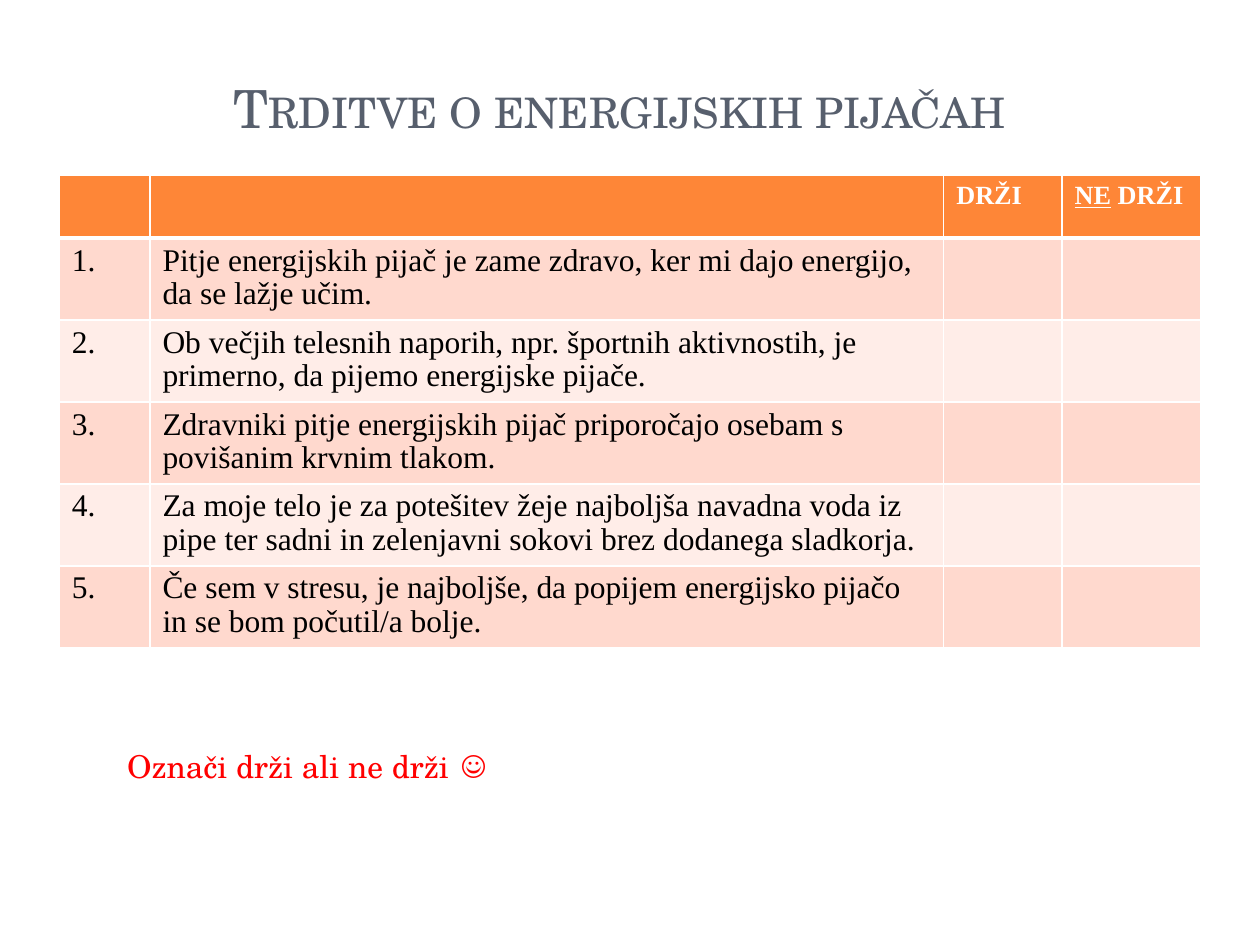
from pptx import Presentation
from pptx.dml.color import RGBColor
from pptx.enum.text import MSO_ANCHOR, MSO_AUTO_SIZE, PP_ALIGN
from pptx.oxml import parse_xml
from pptx.oxml.ns import nsdecls
from pptx.util import Inches, Pt

SERIF, SCHOLA = "Times New Roman", "TeX Gyre Schola"
WHITE, ORANGE = "FFFFFF", "FE8637"
BANDS = ["FFD9CE", "FFEDE8"]
COLUMNS = [0.72, 6.3, 0.94, 1.1]
HEADER_HEIGHT, ROW_HEIGHT = 0.5, 0.65
HEADERS = [[], [], [("DRŽI", False)], [("NE", True), (" DRŽI", False)]]
STATEMENTS = [
    "Pitje energijskih pijač je zame zdravo, ker mi dajo energijo, da se lažje učim.",
    "Ob večjih telesnih naporih, npr. športnih aktivnostih, je primerno, da pijemo energijske pijače.",
    "Zdravniki pitje energijskih pijač priporočajo osebam s povišanim krvnim tlakom.",
    "Za moje telo je za potešitev žeje najboljša navadna voda iz pipe ter sadni in "
    "zelenjavni sokovi brez dodanega sladkorja.",
    "Če sem v stresu, je najboljše, da popijem energijsko pijačo in se bom počutil/a bolje.",
]


def rgb(color):
    return RGBColor.from_string(color)


def add_run(p, text, size, font, color, bold=False, underline=False):
    r = p.add_run()
    r.text = text
    r.font.size = Pt(size)
    r.font.name = font
    r.font.color.rgb = rgb(color)
    r.font.bold = bold
    r.font.underline = underline
    return r


def style_cell(cell, fill, bottom=1):
    """Give a cell white borders, in points, and a solid fill."""
    tcPr = cell._tc.get_or_add_tcPr()
    for side, width in (("L", 1), ("R", 1), ("T", 1), ("B", bottom)):
        tcPr.append(parse_xml(
            f'<a:ln{side} {nsdecls("a")} w="{Pt(width)}"><a:solidFill>'
            f'<a:srgbClr val="{WHITE}"/></a:solidFill></a:ln{side}>'))
    cell.fill.solid()
    cell.fill.fore_color.rgb = rgb(fill)


def add_title(s, left, top, width, height):
    sp = s.shapes.title
    sp.left, sp.top, sp.width, sp.height = map(Inches, (left, top, width, height))
    tf = sp.text_frame
    tf.vertical_anchor = MSO_ANCHOR.BOTTOM
    p = tf.paragraphs[0]
    p.alignment = PP_ALIGN.CENTER
    r = add_run(p, "Trditve o energijskih pijačah", 30, SCHOLA, "575F6D")
    r.font._element.set("cap", "small")


def add_statement_table(s, left, top):
    heights = [HEADER_HEIGHT] + [ROW_HEIGHT] * len(STATEMENTS)
    table = s.shapes.add_table(
        len(heights), len(COLUMNS), Inches(left), Inches(top),
        Inches(sum(COLUMNS)), Inches(sum(heights))).table
    for column, width in zip(table.columns, COLUMNS):
        column.width = Inches(width)
    for row, height in zip(table.rows, heights):
        row.height = Inches(height)

    for cell, runs in zip(table.rows[0].cells, HEADERS):
        style_cell(cell, ORANGE, bottom=3)
        for text, underline in runs:
            add_run(cell.text_frame.paragraphs[0], text, 15, SERIF, WHITE, True, underline)

    for i, statement in enumerate(STATEMENTS, 1):
        for j, cell in enumerate(table.rows[i].cells):
            style_cell(cell, BANDS[(i - 1) % 2], bottom=1)
            if j < 2:
                p = cell.text_frame.paragraphs[0]
                p.line_spacing = 0.96
                add_run(p, (f"{i}.", statement)[j], 18, SERIF, "000000")
        if i == 1:
            for cell in table.rows[i].cells:
                cell._tc.tcPr.find("{*}lnT").set("w", str(Pt(3)))


def add_instruction(s, left, top, width, height):
    tf = s.shapes.add_textbox(*map(Inches, (left, top, width, height))).text_frame
    tf.word_wrap = True
    tf.auto_size = MSO_AUTO_SIZE.SHAPE_TO_FIT_TEXT
    add_run(tf.paragraphs[0], "Označi drži ali ne drži ☺", 18, SCHOLA, "FF0000")


def main():
    prs = Presentation()
    prs.slide_width, prs.slide_height = Inches(10), Inches(7.5)
    s = prs.slides.add_slide(prs.slide_layouts[5])
    add_title(s, 0.83, 0.44, 8.17, 0.71)
    add_statement_table(s, 0.47, 1.39)
    add_instruction(s, 0.91, 5.88, 6.61, 0.4)
    prs.save("out.pptx")


if __name__ == "__main__":
    main()
